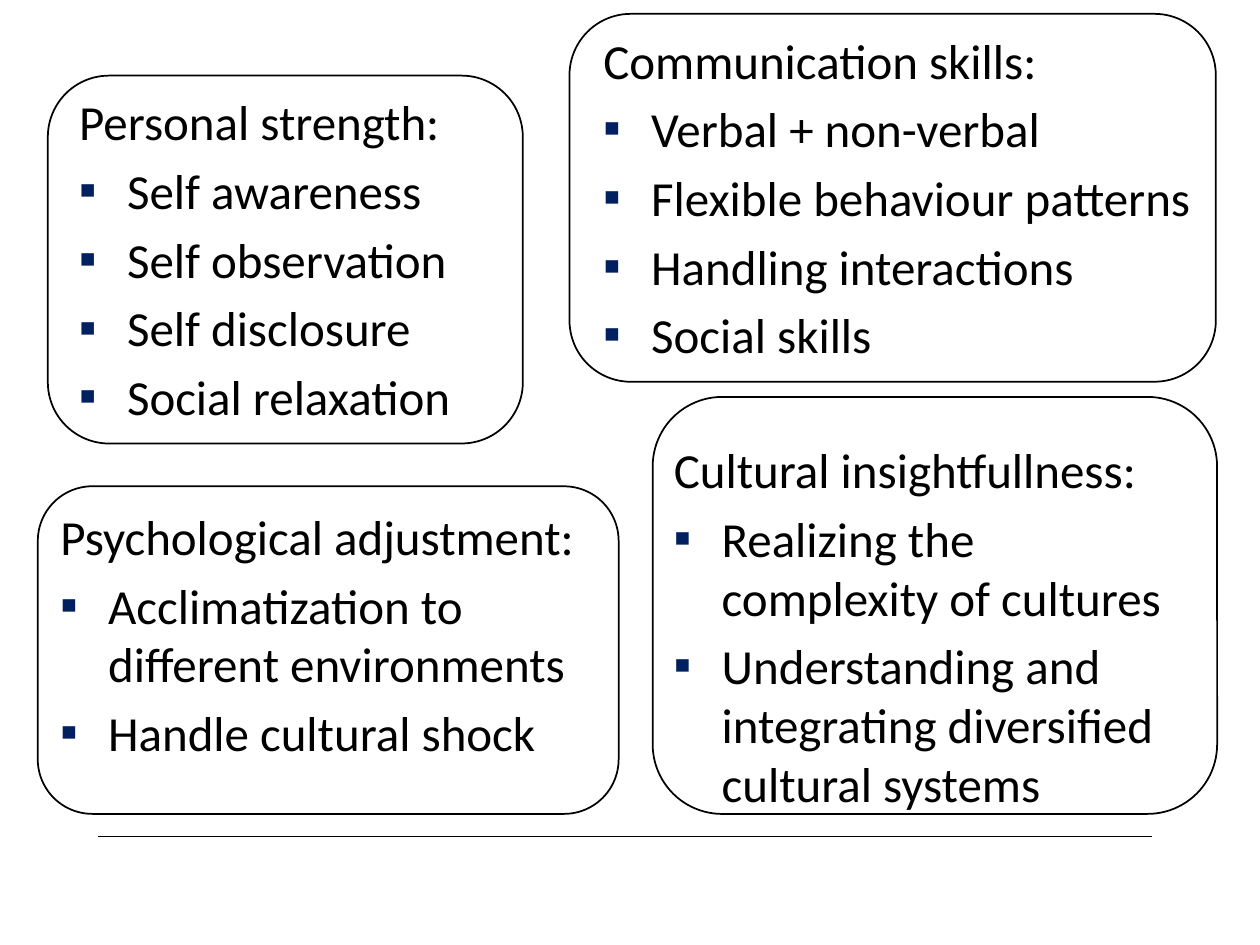
from dataclasses import dataclass

from lxml import etree
from pptx import Presentation
from pptx.dml.color import RGBColor
from pptx.enum.shapes import MSO_CONNECTOR, MSO_SHAPE
from pptx.oxml.ns import qn
from pptx.slide import Slide
from pptx.util import Inches, Pt

BLACK = RGBColor(0x00, 0x00, 0x00)
NAVY = RGBColor(0x00, 0x20, 0x60)
FONT = "Calibri"
INDENT = Inches(0.38)


@dataclass
class SkillCard:
    heading: str
    points: list[str]
    frame: tuple[float, float, float, float]  # left, top, width, height
    text: tuple[float, float, float, float]


CARDS = [
    SkillCard(
        "Psychological adjustment:",
        ["Acclimatization to different environments", "Handle cultural shock"],
        (0.3, 3.86, 4.61, 2.6), (0.38, 3.97, 4.61, 2.48),
    ),
    SkillCard(
        "Cultural insightfullness:",
        ["Realizing the complexity of cultures",
         "Understanding and integrating diversified cultural systems"],
        (5.18, 3.15, 4.48, 3.31), (5.25, 3.44, 4.33, 2.88),
    ),
    SkillCard(
        "Personal strength:",
        ["Self awareness", "Self observation", "Self disclosure", "Social relaxation"],
        (0.38, 0.6, 3.77, 2.92), (0.53, 0.68, 3.69, 2.75),
    ),
    SkillCard(
        "Communication skills:",
        ["Verbal + non-verbal", "Flexible behaviour patterns",
         "Handling interactions", "Social skills"],
        (4.52, 0.11, 5.13, 2.92), (4.69, 0.19, 4.96, 2.75),
    ),
]


def set_hanging_indent(paragraph, bulleted: bool) -> None:
    properties = paragraph._p.get_or_add_pPr()
    properties.set("marL", str(INDENT))
    properties.set("indent", str(-INDENT))
    if not bulleted:
        etree.SubElement(properties, qn("a:buNone"))
        return
    color = etree.SubElement(properties, qn("a:buClr"))
    etree.SubElement(color, qn("a:srgbClr"), val=str(NAVY))
    etree.SubElement(properties, qn("a:buFont"), typeface=FONT)
    etree.SubElement(properties, qn("a:buChar"), char="▪")


def add_card(slide: Slide, card: SkillCard) -> None:
    group = slide.shapes.add_group_shape()

    # Heading and bullet points
    text_box = group.shapes.add_textbox(*map(Inches, card.text))
    text_frame = text_box.text_frame
    text_frame.word_wrap = True
    text_frame.text = "\n".join([card.heading, *card.points])
    for index, paragraph in enumerate(text_frame.paragraphs):
        set_hanging_indent(paragraph, bulleted=index > 0)
        paragraph.space_before = Pt(5.6 if index else 0)
        paragraph.font.name = FONT
        paragraph.font.size = Pt(28)
        paragraph.font.color.rgb = BLACK

    # Rounded outline
    outline = group.shapes.add_shape(MSO_SHAPE.ROUNDED_RECTANGLE, *map(Inches, card.frame))
    outline.shadow.inherit = False
    outline.fill.background()
    outline.line.color.rgb = BLACK
    outline.line.width = Pt(1)


def add_footer_rule(slide: Slide) -> None:
    rule = slide.shapes.add_connector(
        MSO_CONNECTOR.STRAIGHT, Inches(0.78), Inches(6.64), Inches(9.14), Inches(6.64))
    rule.line.color.rgb = BLACK
    rule.line.width = Pt(0.5)
    etree.SubElement(rule._element.spPr, qn("a:effectLst"))


def main() -> None:
    presentation = Presentation()
    presentation.slide_width = Inches(10)
    presentation.slide_height = Inches(7.5)
    slide = presentation.slides.add_slide(presentation.slide_layouts[6])
    add_footer_rule(slide)
    for card in CARDS:
        add_card(slide, card)
    presentation.save("out.pptx")


if __name__ == "__main__":
    main()
